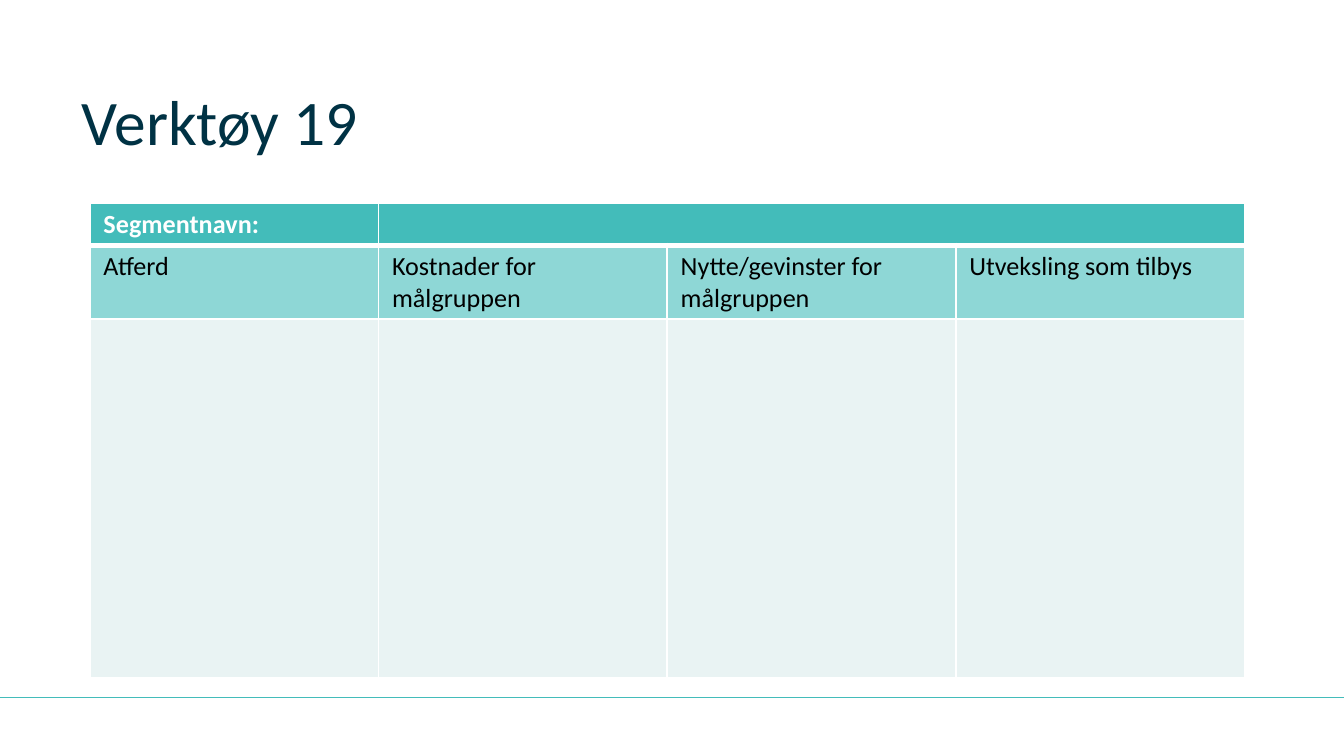
from lxml.etree import SubElement
from pptx import Presentation
from pptx.dml.color import RGBColor
from pptx.enum.shapes import MSO_CONNECTOR
from pptx.enum.text import MSO_ANCHOR
from pptx.oxml.ns import qn
from pptx.util import Inches, Pt

TEAL = RGBColor(0x43, 0xBC, 0xBA)
MID_TEAL = RGBColor(0x8E, 0xD7, 0xD6)
PALE_TEAL = RGBColor(0xE9, 0xF3, 0xF3)
NAVY = RGBColor(0x00, 0x32, 0x44)
BLACK = RGBColor(0, 0, 0)
WHITE = RGBColor(0xFF, 0xFF, 0xFF)
FONT = "Calibri"

SLIDE_WIDTH = Inches(10)
SLIDE_HEIGHT = SLIDE_WIDTH * 9 // 16
TABLE_WIDTH = Inches(8.59)
ROW_HEIGHTS = [0.31, 0.55, 2.67]
ROW_FILLS = [TEAL, MID_TEAL, PALE_TEAL]
CELL_TEXTS = [
    ["Segmentnavn:", "", "", ""],
    ["Atferd", "Kostnader for målgruppen",
     "Nytte/gevinster for målgruppen", "Utveksling som tilbys"],
    ["", "", "", ""],
]


def set_text(tf, text, *, size, color=BLACK, bold=False):
    """Write one paragraph; an empty one still gets its text size."""
    p = tf.paragraphs[0]
    if not text:
        SubElement(p._p, qn("a:endParaRPr"), sz=str(size * 100))
        return
    r = p.add_run()
    r.text = text
    r.font.name = FONT
    r.font.size = Pt(size)
    r.font.bold = bold
    r.font.color.rgb = color


def set_borders(cell, top=1, bottom=1):
    tc_pr = cell._tc.get_or_add_tcPr()
    for side, width in zip("LRTB", (1, 1, top, bottom)):
        ln = SubElement(tc_pr, qn(f"a:ln{side}"), w=str(Pt(width)))
        fill = SubElement(ln, qn("a:solidFill"))
        SubElement(fill, qn("a:srgbClr"), val=str(WHITE))


def add_title(slide, text):
    box = slide.shapes.add_textbox(
        Inches(0.51), Inches(0.55), Inches(8.98), Inches(0.68))
    tf = box.text_frame
    tf.word_wrap = True
    tf.vertical_anchor = MSO_ANCHOR.BOTTOM
    set_text(tf, text, size=34, color=NAVY)


def add_footer_line(slide):
    line = slide.shapes.add_connector(
        MSO_CONNECTOR.STRAIGHT, 0, Inches(5.19), SLIDE_WIDTH, Inches(5.19))
    line.line.color.rgb = TEAL
    line.line.width = Pt(1)
    SubElement(line._element.spPr, qn("a:effectLst"))


def add_segment_table(slide):
    n_rows, n_cols = len(ROW_HEIGHTS), len(CELL_TEXTS[0])
    table = slide.shapes.add_table(
        n_rows, n_cols, Inches(0.67), Inches(1.51),
        TABLE_WIDTH, Inches(sum(ROW_HEIGHTS))).table
    for i, (height, fill, texts) in enumerate(
            zip(ROW_HEIGHTS, ROW_FILLS, CELL_TEXTS)):
        table.rows[i].height = Inches(height)
        header = i == 0
        for j, text in enumerate(texts):
            cell = table.cell(i, j)
            cell.margin_left = cell.margin_right = Inches(0.1)
            cell.margin_top = cell.margin_bottom = Inches(0.04)
            set_borders(cell, top=3 if i == 1 else 1,
                        bottom=3 if header else 1)
            cell.fill.solid()
            cell.fill.fore_color.rgb = fill
            set_text(cell.text_frame, text, size=14, bold=header,
                     color=WHITE if header else BLACK)
    table.cell(0, 1).merge(table.cell(0, n_cols - 1))


def main():
    prs = Presentation()
    prs.slide_width = SLIDE_WIDTH
    prs.slide_height = SLIDE_HEIGHT
    slide = prs.slides.add_slide(prs.slide_layouts[6])
    add_footer_line(slide)
    add_title(slide, "Verktøy 19")
    add_segment_table(slide)
    prs.save("out.pptx")


if __name__ == "__main__":
    main()
